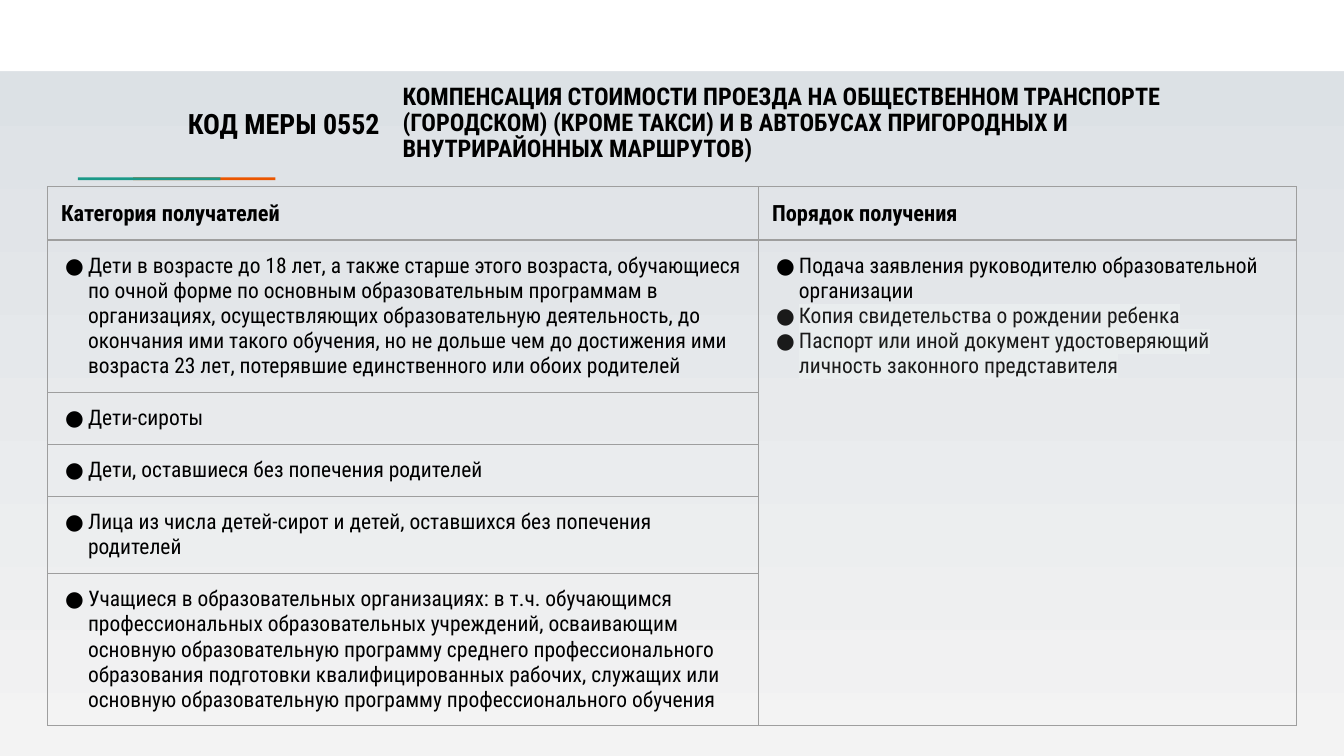
from pptx import Presentation
from pptx.dml.color import RGBColor
from pptx.enum.lang import MSO_LANGUAGE_ID
from pptx.enum.shapes import MSO_SHAPE
from pptx.enum.text import MSO_ANCHOR, MSO_AUTO_SIZE, PP_ALIGN
from pptx.oxml.ns import qn
from pptx.util import Inches, Pt
from lxml import etree

RECTANGLE = MSO_SHAPE.RECTANGLE
MIDDLE = MSO_ANCHOR.MIDDLE
LEFT, RIGHT = PP_ALIGN.LEFT, PP_ALIGN.RIGHT
FIXED = MSO_AUTO_SIZE.NONE
RUSSIAN = MSO_LANGUAGE_ID.RUSSIAN

WIDTH = 10
HEIGHT = WIDTH * 9 / 16
COLUMNS, ROWS = WIDTH * 10, HEIGHT * 10  # grid unit: a tenth of an inch
FONT = "Roboto Condensed"
COLORS = {
    "sky": "DADFE4", "mist": "F3F3F3", "white": "FFFFFF", "black": "000000",
    "ink": "1A1A1A", "marker": "E9EDEE", "rule": "9E9E9E",
    "teal": "1A9988", "orange": "EB5600",
}

TITLE = ("КОМПЕНСАЦИЯ СТОИМОСТИ ПРОЕЗДА НА ОБЩЕСТВЕННОМ ТРАНСПОРТЕ (ГОРОДСКОМ) "
         "(КРОМЕ ТАКСИ) И В АВТОБУСАХ ПРИГОРОДНЫХ И ВНУТРИРАЙОННЫХ МАРШРУТОВ)")
CODE = "КОД МЕРЫ 0552"
HEADINGS = ["Категория получателей", "Порядок получения"]
RECIPIENTS = [
    "Дети в возрасте до 18 лет, а также старше этого возраста, обучающиеся по очной "
    "форме по основным образовательным программам в организациях, осуществляющих "
    "образовательную деятельность, до окончания ими такого обучения, но не дольше чем "
    "до достижения ими возраста 23 лет, потерявшие единственного или обоих родителей",
    "Дети-сироты",
    "Дети, оставшиеся без попечения родителей",
    "Лица из числа детей-сирот и детей, оставшихся без попечения родителей",
    "Учащиеся в образовательных организациях: в т.ч. обучающимся профессиональных "
    "образовательных учреждений, осваивающим основную образовательную программу "
    "среднего профессионального образования подготовки квалифицированных рабочих, "
    "служащих или основную образовательную программу профессионального обучения",
]
APPLICATION = "Подача заявления руководителю образовательной организации"
DOCUMENTS = [
    "Копия свидетельства о рождении ребенка",
    "Паспорт или иной документ удостоверяющий личность законного представителя",
]


def rgb(name):
    return RGBColor.from_string(COLORS[name])


def add_color(parent, name):
    etree.SubElement(parent, qn("a:srgbClr"), val=COLORS[name])


def write(para, text, size, color="black", bold=False, align=LEFT,
          spacing=None, bullet=None, highlight=None):
    para.alignment = align
    if spacing:
        para.line_spacing = spacing
    span = para.add_run()
    span.text = text
    span.font.size, span.font.bold, span.font.name = Pt(size), bold, FONT
    span.font.language_id = RUSSIAN
    span.font.color.rgb = rgb(color)
    if highlight:
        mark = etree.Element(qn("a:highlight"))
        add_color(mark, highlight)
        span.font.fill._xPr.find(qn("a:solidFill")).addnext(mark)
    if bullet:
        properties = para._p.get_or_add_pPr()
        properties.set("marL", str(Inches(0.2)))
        properties.set("indent", str(Inches(-0.17)))
        add_color(etree.SubElement(properties, qn("a:buClr")), color)
        etree.SubElement(properties, qn("a:buFont"), typeface=FONT)
        etree.SubElement(properties, qn("a:buChar"), char=bullet)


def set_margins(target, horizontal, vertical):
    target.margin_left = target.margin_right = Inches(horizontal)
    target.margin_top = target.margin_bottom = Inches(vertical)


class Page:
    """Holds the deck, its current slide and the grid that places elements."""

    def __init__(self):
        self.deck = Presentation()
        self.deck.slide_width, self.deck.slide_height = Inches(WIDTH), Inches(HEIGHT)
        self.slide = self.deck.slides.add_slide(self.deck.slide_layouts[5])

    def area(self, column, row, columns, rows):
        """Turn grid units into left, top, width and height."""
        across, down = Inches(WIDTH) / COLUMNS, Inches(HEIGHT) / ROWS
        return (round(column * across), round(row * down),
                round(columns * across), round(rows * down))

    def background(self, top, bottom):
        fill = self.slide.background.fill
        fill.gradient()
        fill.gradient_angle = 270
        for stop, name in zip(fill.gradient_stops, (top, bottom)):
            stop.color.rgb = rgb(name)

    def bar(self, color, *place):
        shape = self.slide.shapes.add_shape(RECTANGLE, *self.area(*place))
        shape.shadow.inherit = False
        shape.fill.solid()
        shape.fill.fore_color.rgb = rgb(color)
        shape.line.fill.background()

    def fill_box(self, box, text, margins, **style):
        frame = box.text_frame
        frame.word_wrap, frame.auto_size = True, FIXED
        frame.vertical_anchor = MIDDLE
        set_margins(frame, *margins)
        write(frame.paragraphs[0], text, bold=True, **style)

    def title(self, text, *place, **style):
        box = self.slide.shapes.title
        box.left, box.top, box.width, box.height = self.area(*place)
        self.fill_box(box, text, (0.07, 0.04), **style)

    def label(self, text, *place, **style):
        box = self.slide.shapes.add_textbox(*self.area(*place))
        self.fill_box(box, text, (0.1, 0.1), **style)

    def table(self, column, row, widths, heights):
        place = self.area(column, row, sum(widths), sum(heights))
        table = self.slide.shapes.add_table(len(heights), len(widths), *place).table
        table.first_row = table.horz_banding = False
        for table_column, width in zip(table.columns, widths):
            table_column.width = self.area(0, 0, width, 0)[2]
        for table_row, height in zip(table.rows, heights):
            table_row.height = self.area(0, 0, 0, height)[3]
        for cell in table.iter_cells():
            set_margins(cell, 0.1, 0.1)
            cell.fill.background()
            self.outline(cell)
        return table

    def outline(self, cell):
        properties = cell._tc.get_or_add_tcPr()
        for index, side in enumerate(("lnL", "lnR", "lnT", "lnB")):
            line = etree.Element(qn(f"a:{side}"), w=str(Pt(0.75)))
            add_color(etree.SubElement(line, qn("a:solidFill")), "rule")
            properties.insert(index, line)


def main():
    page = Page()
    page.background("sky", "mist")
    page.bar("white", 0, 0, COLUMNS, 5.3)
    page.bar("orange", 9.9, 13.2, 10.6, 0.2)
    page.bar("teal", 5.8, 13.2, 10.6, 0.2)
    page.title(TITLE, 29.25, 5.35, 63, 7.7, size=13, spacing=0.9)
    page.label(CODE, 8.15, 5.3, 21.1, 7.7, size=15, align=RIGHT)

    table = page.table(3.55, 13.9, [52.9, 40], [3.9, 11.3, 3.85, 3.85, 5.7, 11.3])
    for index, heading in enumerate(HEADINGS):
        write(table.cell(0, index).text_frame.paragraphs[0], heading, 12, bold=True)
    item = {"size": 11.5, "bullet": "●"}
    for index, recipient in enumerate(RECIPIENTS, start=1):
        write(table.cell(index, 0).text_frame.paragraphs[0], recipient, **item)

    procedure = table.cell(1, 1)
    procedure.merge(table.cell(len(RECIPIENTS), 1))
    frame = procedure.text_frame
    write(frame.paragraphs[0], APPLICATION, **item)
    for document in DOCUMENTS:
        write(frame.add_paragraph(), document, color="ink", highlight="marker", **item)

    page.deck.save("out.pptx")


if __name__ == "__main__":
    main()
